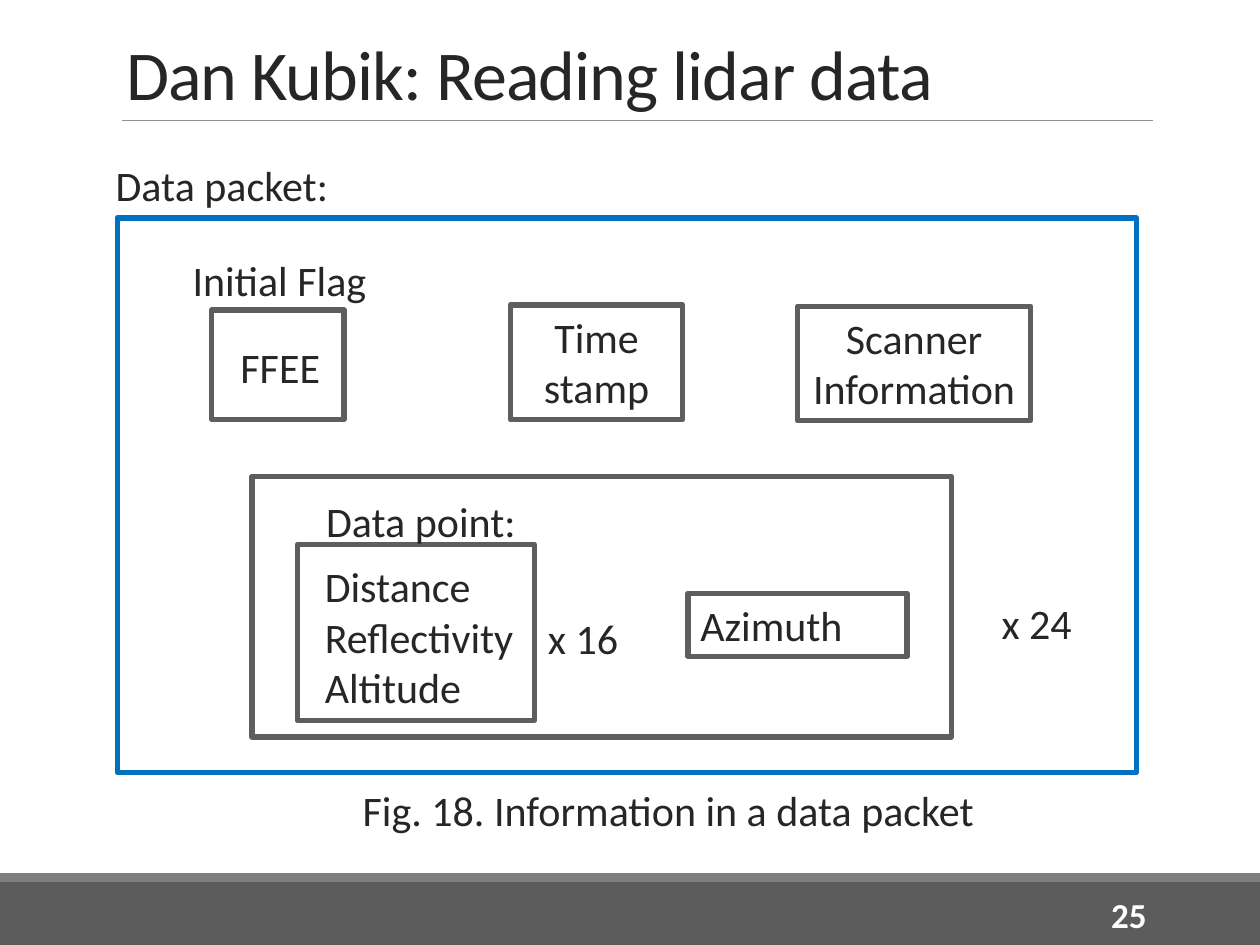
from lxml import etree
from pptx import Presentation
from pptx.dml.color import RGBColor
from pptx.enum import shapes, text
from pptx.oxml import ns
from pptx.util import Inches, Pt

INK = RGBColor(0x26, 0x26, 0x26)
GREY = RGBColor(0x5E, 0x5E, 0x5E)
BLUE = RGBColor(0x00, 0x70, 0xC0)
BAND = RGBColor(0x5C, 0x5C, 0x5C)
STRIP = RGBColor(0x7F, 0x7F, 0x7F)
RULE = RGBColor(0x92, 0x92, 0x92)
WHITE = RGBColor(0xFF, 0xFF, 0xFF)
LEFT, MID, RIGHT = text.PP_ALIGN.LEFT, text.PP_ALIGN.CENTER, text.PP_ALIGN.RIGHT

deck = Presentation()
deck.slide_width, deck.slide_height = Inches(10), Inches(7.5)
slide = deck.slides.add_slide(deck.slide_layouts[5])


def write(shape, lines, size=24, color=INK, align=LEFT, bold=False,
          anchor=text.MSO_ANCHOR.TOP):
    """Fill the shape with one paragraph per line and return the last run."""
    frame = shape.text_frame
    frame.word_wrap = True
    frame.auto_size = text.MSO_AUTO_SIZE.NONE
    frame.vertical_anchor = anchor
    for i, line in enumerate(lines):
        para = frame.add_paragraph() if i else frame.paragraphs[0]
        para.alignment = align
        run = para.add_run()
        run.text = line
        run.font.name, run.font.size, run.font.bold = "Calibri", Pt(size), bold
        run.font.color.rgb = color
    return run


def draw(spot, fill=None, line=None):
    """Add a rectangle that has either a fill or a thick outline."""
    box = slide.shapes.add_shape(shapes.MSO_SHAPE.RECTANGLE, *map(Inches, spot))
    box.shadow.inherit = False
    if fill:
        box.fill.solid()
        box.fill.fore_color.rgb = fill
        box.line.fill.background()
    else:
        box.fill.background()
        box.line.color.rgb = line
        box.line.width = Pt(3)
    return box


# Footer bands, title rule and page number
draw((0, 7, 10, 0.5), fill=BAND)
draw((0, 6.93, 10, 0.07), fill=STRIP)
rule = slide.shapes.add_connector(
    shapes.MSO_CONNECTOR.STRAIGHT, *map(Inches, (0.97, 0.96, 9.15, 0.96)))
rule.line.color.rgb = RULE
rule.line.width = Pt(0.5)
etree.SubElement(rule._element.spPr, ns.qn("a:effectLst"))
page = slide.shapes.add_textbox(*map(Inches, (8.12, 7.06, 1.08, 0.4)))
write(page, ["25"], 20, WHITE, RIGHT, True, text.MSO_ANCHOR.MIDDLE)

# Title
title = slide.shapes.title
title.left, title.top, title.width, title.height = map(Inches, (0.9, 0.23, 8.25, 0.73))
run = write(title, ["Dan Kubik: Reading lidar data"], 40, anchor=text.MSO_ANCHOR.BOTTOM)
run.font._element.set("spc", "-50")
title.text_frame.paragraphs[0].line_spacing = 0.85

# Packet, flag, data point and block outlines
draw((0.93, 1.73, 8.09, 4.4), line=BLUE)
for spot in [(1.68, 2.46, 1.05, 0.87), (2.36, 4.32, 1.88, 1.4), (2, 3.78, 5.55, 2.07)]:
    draw(spot, line=GREY)

# Boxes with their own text
for spot, words, align in [
    ((4.05, 2.42, 1.37, 0.91), "Time stamp", MID),
    ((6.33, 2.43, 1.85, 0.91), "Scanner Information", MID),
    ((5.46, 4.71, 1.74, 0.5), "Azimuth", LEFT),
]:
    write(draw(spot, line=GREY), [words], align=align)

# Labels
for spot, lines in [
    ((0.82, 1.22, 2.8, 0.5), ["Data packet:"]),
    ((1.43, 1.97, 1.97, 0.5), ["Initial Flag"]),
    ((1.81, 2.66, 0.92, 0.46), ["FFEE"]),
    ((2.49, 3.88, 2.8, 0.5), ["Data point:"]),
    ((2.48, 4.4, 1.74, 1.31), ["Distance", "Reflectivity", "Altitude"]),
    ((4.25, 4.81, 0.82, 0.5), ["x 16"]),
    ((7.85, 4.69, 0.82, 0.5), ["x 24"]),
    ((2.78, 6.18, 5.79, 0.5), ["Fig. 18. Information in a data packet"]),
]:
    write(slide.shapes.add_textbox(*map(Inches, spot)), lines)

deck.save("out.pptx")
